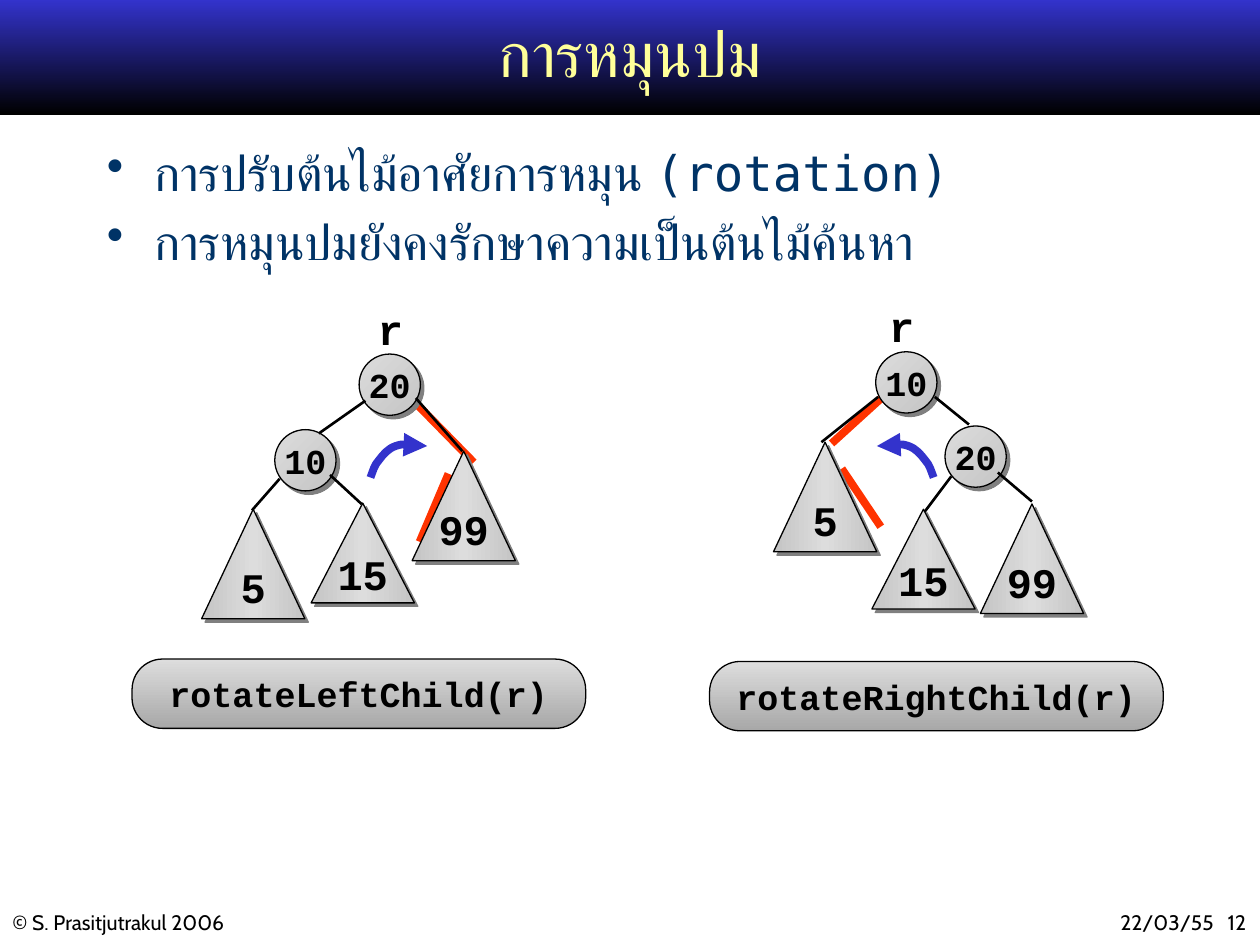
from dataclasses import dataclass
from typing import Optional

from lxml.etree import SubElement
from pptx import Presentation
from pptx.dml.color import RGBColor
from pptx.enum.shapes import MSO_CONNECTOR, MSO_SHAPE
from pptx.enum.text import MSO_ANCHOR, PP_ALIGN
from pptx.oxml.ns import qn
from pptx.util import Pt

COLORS = {
    "header_top": "3333CC", "black": "000000", "title": "FFFF99", "body": "003366",
    "guide": "FF3300", "arrow": "3333CC", "light": "DDDDDD", "middle": "C4C4C4",
    "dark": "A8A8A8", "shadow": "808080",
}
CODE_FONT = "Courier New"
TEXT_FONT = "DejaVu Sans Mono"
FOOTER_FONT = "Cabin"
NODE_SIZE = 35
SUBTREE_WIDTH = 59
CURVE_STEPS = [(1.4, -3.6), (2.2, -7.2), (5, -10.1), (7.2, -13), (10.1, -16.6),
               (14.4, -18), (18.7, -19.4), (25.9, -18.7), (32.4, -18)]


@dataclass
class Line:
    x1: float
    y1: float
    x2: float
    y2: float


@dataclass
class Node:
    key: str
    left: float
    top: float


@dataclass
class Subtree:
    key: str
    left: float
    top: float
    height: float


@dataclass
class Tree:
    guides: list[Line]
    subtrees: list[Subtree]
    nodes: list[Node]
    edges: list[Line]
    curve_start: tuple[float, float]
    direction: int
    root_label: tuple[float, float]
    method: str
    method_corner: tuple[float, float]


TREES = [
    Tree(
        guides=[Line(233.3, 226, 270.7, 264.2), Line(239.8, 309.6, 256.3, 270.7)],
        subtrees=[Subtree("15", 177.8, 287.5, 57), Subtree("99", 235.5, 257.8, 62.6),
                  Subtree("5", 115.2, 291, 62.6)],
        nodes=[Node("20", 205.2, 202.3), Node("10", 157, 245.5)],
        edges=[Line(208.8, 229, 182.2, 247.7), Line(237.6, 227.5, 264.2, 257.8),
               Line(159.8, 273.6, 144, 291.6), Line(188.6, 271.4, 206.6, 288)],
        curve_start=(211.7, 272.9), direction=1, root_label=(208.8, 170),
        method="rotateLeftChild(r)", method_corner=(75.5, 376.6),
    ),
    Tree(
        guides=[Line(481, 267.8, 503.3, 301), Line(514.8, 217.4, 475.2, 253.4)],
        subtrees=[Subtree("15", 498.2, 291, 57), Subtree("5", 442, 252.7, 62.6),
                  Subtree("99", 560.2, 288, 62.6)],
        nodes=[Node("10", 500.4, 201), Node("20", 540, 243.4)],
        edges=[Line(501.8, 226.8, 469.4, 252.7), Line(534.2, 226.8, 553.7, 242.6),
               Line(543.6, 272.2, 528.5, 292.3), Line(570.2, 270, 589.7, 286.6)],
        curve_start=(533.5, 272.9), direction=-1, root_label=(501, 168),
        method="rotateRightChild(r)", method_corner=(405.5, 378),
    ),
]


def rgb(name: str) -> RGBColor:
    return RGBColor.from_string(COLORS[name])


def style_font(paragraph, font: str, size: float, color: str, bold: bool = False) -> None:
    paragraph.font.name = font
    paragraph.font.size = Pt(size)
    paragraph.font.bold = bold
    paragraph.font.color.rgb = rgb(color)


def add_text(slide, text: str, left: float, top: float, width: float, height: float,
             font: str, size: float, color: str, bold: bool = False, wrap: bool = True,
             tabs: tuple = ()):
    frame = slide.shapes.add_textbox(Pt(left), Pt(top), Pt(width), Pt(height)).text_frame
    frame.word_wrap = wrap
    for index, line in enumerate(text.split("\n")):
        paragraph = frame.add_paragraph() if index else frame.paragraphs[0]
        paragraph.text = line
        if tabs:
            tab_list = SubElement(paragraph._p.get_or_add_pPr(), qn("a:tabLst"))
            for position in tabs:
                SubElement(tab_list, qn("a:tab"), pos=str(Pt(position)), algn="r")
        style_font(paragraph, font, size, color, bold)
    return frame


def fill_gradient(shape, names: list[str], angle: int) -> None:
    shape.fill.gradient()
    gradient = shape.element.spPr.find(qn("a:gradFill"))
    for child in list(gradient):
        gradient.remove(child)
    stops = SubElement(gradient, qn("a:gsLst"))
    for index, name in enumerate(names):
        position = index * 100000 // (len(names) - 1)
        stop = SubElement(stops, qn("a:gs"), pos=str(position))
        SubElement(stop, qn("a:srgbClr"), val=COLORS[name])
    SubElement(gradient, qn("a:lin"), ang=str(angle * 60000), scaled="0")


def add_box(slide, kind: MSO_SHAPE, left: float, top: float, width: float, height: float,
            stops: list[str], angle: int, text: str = "", size: float = 20,
            shadow: bool = False, spacing: Optional[float] = None):
    shape = slide.shapes.add_shape(kind, Pt(left), Pt(top), Pt(width), Pt(height))
    fill_gradient(shape, stops, angle)
    shape.shadow.inherit = False
    if not text:
        shape.line.fill.background()
        return shape
    shape.line.color.rgb = rgb("black")
    shape.line.width = Pt(0.75)
    if shadow:
        effects = shape.element.spPr.find(qn("a:effectLst"))
        outer = SubElement(effects, qn("a:outerShdw"), dist=str(Pt(2.8)),
                           dir="2700000", algn="ctr", rotWithShape="0")
        SubElement(outer, qn("a:srgbClr"), val=COLORS["shadow"])
    frame = shape.text_frame
    frame.margin_left = frame.margin_right = frame.margin_top = frame.margin_bottom = 0
    frame.vertical_anchor = MSO_ANCHOR.MIDDLE
    frame.word_wrap = shadow
    paragraph = frame.paragraphs[0]
    paragraph.text = text
    paragraph.alignment = PP_ALIGN.CENTER
    paragraph.line_spacing = spacing
    style_font(paragraph, CODE_FONT, size, "black", True)
    return shape


def add_line(slide, line: Line, color: str, width: float) -> None:
    connector = slide.shapes.add_connector(
        MSO_CONNECTOR.STRAIGHT, Pt(line.x1), Pt(line.y1), Pt(line.x2), Pt(line.y2))
    connector.line.color.rgb = rgb(color)
    connector.line.width = Pt(width)
    SubElement(connector.element.spPr, qn("a:effectLst"))


def add_rotation_arrow(slide, start: tuple[float, float], direction: int) -> None:
    x, y = start
    builder = slide.shapes.build_freeform(Pt(x), Pt(y))
    builder.add_line_segments(
        [(Pt(x + direction * dx), Pt(y + dy)) for dx, dy in CURVE_STEPS], close=False)
    shape = builder.convert_to_shape()
    outline = shape.element.find(".//" + qn("a:path"))
    segments = outline.findall(qn("a:lnTo"))
    for index in range(0, len(segments), 3):
        curve = SubElement(outline, qn("a:cubicBezTo"))
        for segment in segments[index:index + 3]:
            curve.append(segment[0])
            outline.remove(segment)
    shape.fill.background()
    shape.line.color.rgb = rgb("arrow")
    shape.line.width = Pt(4.5)
    SubElement(shape.line._get_or_add_ln(), qn("a:tailEnd"), type="triangle")
    shape.shadow.inherit = False


def draw_tree(slide, tree: Tree) -> None:
    for guide in tree.guides:
        add_line(slide, guide, "guide", 4.5)
    for subtree in tree.subtrees:
        add_box(slide, MSO_SHAPE.ISOSCELES_TRIANGLE, subtree.left, subtree.top, SUBTREE_WIDTH,
                subtree.height, ["middle", "light", "middle"], 0, subtree.key, 24, True, 0.8)
    for node in tree.nodes:
        add_box(slide, MSO_SHAPE.OVAL, node.left, node.top, NODE_SIZE, NODE_SIZE,
                ["light", "middle"], 45, node.key, shadow=True)
    for edge in tree.edges:
        add_line(slide, edge, "black", 1.5)
    add_rotation_arrow(slide, tree.curve_start, tree.direction)
    label = add_box(slide, MSO_SHAPE.ROUNDED_RECTANGLE, *tree.method_corner, 259.2, 39.6,
                    ["light", "dark"], 90, tree.method)
    label.adjustments[0] = 0.44
    add_text(slide, "r", *tree.root_label, 29, 36, CODE_FONT, 24, "black", True, False)


def main() -> None:
    presentation = Presentation()
    presentation.slide_width, presentation.slide_height = Pt(720), Pt(540)
    slide = presentation.slides.add_slide(presentation.slide_layouts[6])
    add_box(slide, MSO_SHAPE.RECTANGLE, 0, 0, 720, 65.5, ["header_top", "black"], 90)
    add_text(slide, "© S. Prasitjutrakul 2006", 0, 516, 234, 21.6, FOOTER_FONT, 12, "black")
    add_text(slide, "\t22/03/55\t12", 564, 516, 156, 21.6, FOOTER_FONT, 12, "black",
             tabs=(122.5, 141))
    title = add_text(slide, "การหมุนปม", 54, 0, 612, 60, TEXT_FONT, 36, "title")
    title.vertical_anchor = MSO_ANCHOR.MIDDLE
    title.paragraphs[0].alignment = PP_ALIGN.CENTER
    body = add_text(slide, "การปรับต้นไม้อาศัยการหมุน (rotation)\nการหมุนปมยังคงรักษาความเป็นต้นไม้ค้นหา",
                    54, 78, 640, 94.5, TEXT_FONT, 28, "body")
    body.paragraphs[1].space_before = Pt(5.6)
    for paragraph in body.paragraphs:
        properties = paragraph._p.get_or_add_pPr()
        properties.set("marL", str(Pt(27)))
        properties.set("indent", str(Pt(-27)))
        bullet = SubElement(properties, qn("a:buChar"), char="•")
        properties.find(qn("a:defRPr")).addprevious(bullet)
    for tree in TREES:
        draw_tree(slide, tree)
    presentation.save("out.pptx")


if __name__ == "__main__":
    main()
